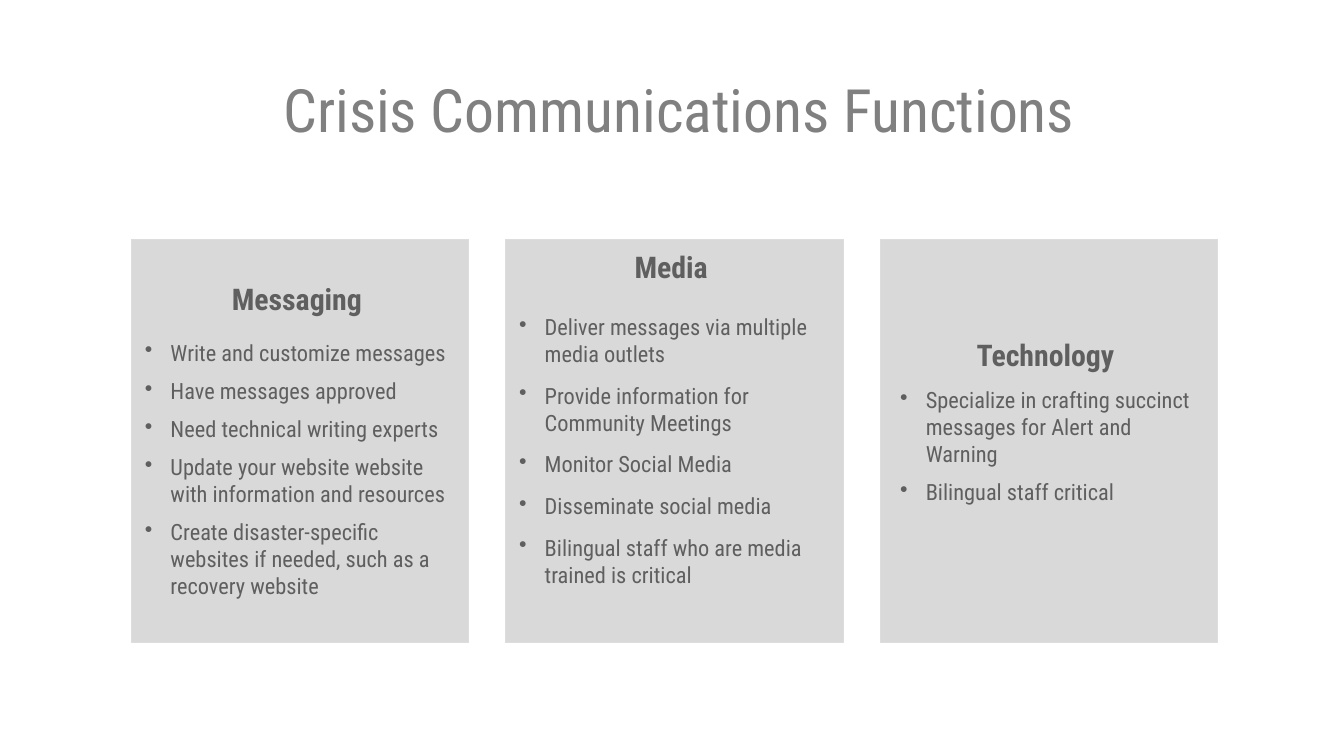
from dataclasses import dataclass

from lxml import etree
from pptx import Presentation
from pptx.dml.color import RGBColor
from pptx.enum.shapes import MSO_SHAPE
from pptx.enum.text import MSO_ANCHOR, PP_ALIGN
from pptx.oxml.ns import qn
from pptx.util import Pt

RECTANGLE = MSO_SHAPE.RECTANGLE
TOP, MIDDLE = MSO_ANCHOR.TOP, MSO_ANCHOR.MIDDLE
LEFT, CENTER = PP_ALIGN.LEFT, PP_ALIGN.CENTER

FONT = "Roboto Condensed"
TITLE_GRAY = RGBColor(0x80, 0x80, 0x80)
TEXT_GRAY = RGBColor(0x5F, 0x5F, 0x5F)
CARD_FILL = RGBColor(0xD9, 0xD9, 0xD9)
CARD_LINE = RGBColor(0xDD, 0xDD, 0xDD)

CARD_LEFT, CARD_TOP, CARD_PITCH = 70.56, 128.16, 200.5
CARD_WIDTH, CARD_HEIGHT = 180.72, 216
HANGING = 13.68


@dataclass(frozen=True)
class Card:
    heading: str
    bullets: tuple[str, ...]
    top_inset: float
    heading_gap: float
    bullet_gap: float
    bullet_margin: float = HANGING


CARDS = (
    Card(
        "Messaging ",
        (
            "Write and customize messages",
            "Have messages approved",
            "Need technical writing experts",
            "Update your website website with information and resources",
            "Create disaster-specific websites if needed, such as a recovery website",
        ),
        top_inset=22.4, heading_gap=12, bullet_gap=6,
    ),
    Card(
        "Media ",
        (
            "Deliver messages via multiple media outlets",
            "Provide information for Community Meetings",
            "Monitor Social Media",
            "Disseminate social media",
            "Bilingual staff who are media trained is critical",
        ),
        top_inset=5.3, heading_gap=15.2, bullet_gap=8,
    ),
    Card(
        "Technology ",
        (
            "Specialize in crafting succinct messages for Alert and Warning",
            "Bilingual staff critical",
        ),
        top_inset=52.5, heading_gap=7.2, bullet_gap=6, bullet_margin=17.28,
    ),
)


def add_span(para, text: str, size: float, color: RGBColor, bold: bool = False) -> None:
    span = para.add_run()
    span.text = text
    span.font.name = FONT
    span.font.size = Pt(size)
    span.font.bold = bold
    span.font.color.rgb = color


def add_bullet(para, margin: float) -> None:
    properties = para._p.get_or_add_pPr()
    properties.set("marL", str(Pt(margin)))
    properties.set("indent", str(-Pt(HANGING)))
    etree.SubElement(properties, qn("a:buChar")).set("char", "•")


def draw_title(page, text: str) -> None:
    box = page.shapes.add_textbox(Pt(144.72), Pt(21.6), Pt(525.6), Pt(78.48))
    box.text_frame.word_wrap = True
    box.text_frame.vertical_anchor = MIDDLE
    para = box.text_frame.paragraphs[0]
    para.line_spacing = 0.9
    add_span(para, text, 32, TITLE_GRAY)


def draw_card(page, card: Card, left: float) -> None:
    box = page.shapes.add_shape(
        RECTANGLE, Pt(left), Pt(CARD_TOP), Pt(CARD_WIDTH), Pt(CARD_HEIGHT)
    )
    box.shadow.inherit = False
    box.fill.solid()
    box.fill.fore_color.rgb = CARD_FILL
    box.line.color.rgb = CARD_LINE
    box.line.width = Pt(0.5)

    frame = box.text_frame
    frame.word_wrap = True
    frame.vertical_anchor = TOP
    frame.margin_top = Pt(card.top_inset)

    para = frame.paragraphs[0]
    para.alignment = CENTER
    para.space_after = Pt(card.heading_gap)
    add_span(para, card.heading, 16, TEXT_GRAY, bold=True)

    for text in card.bullets:
        para = frame.add_paragraph()
        add_bullet(para, card.bullet_margin)
        para.alignment = LEFT
        para.space_after = Pt(card.bullet_gap)
        add_span(para, text, 12, TEXT_GRAY)


def main() -> None:
    deck = Presentation()
    deck.slide_width, deck.slide_height = Pt(720), Pt(405)
    page = deck.slides.add_slide(deck.slide_layouts[6])
    draw_title(page, "Crisis Communications Functions")
    for index, card in enumerate(CARDS):
        draw_card(page, card, CARD_LEFT + index * CARD_PITCH)
    deck.save("out.pptx")


if __name__ == "__main__":
    main()
